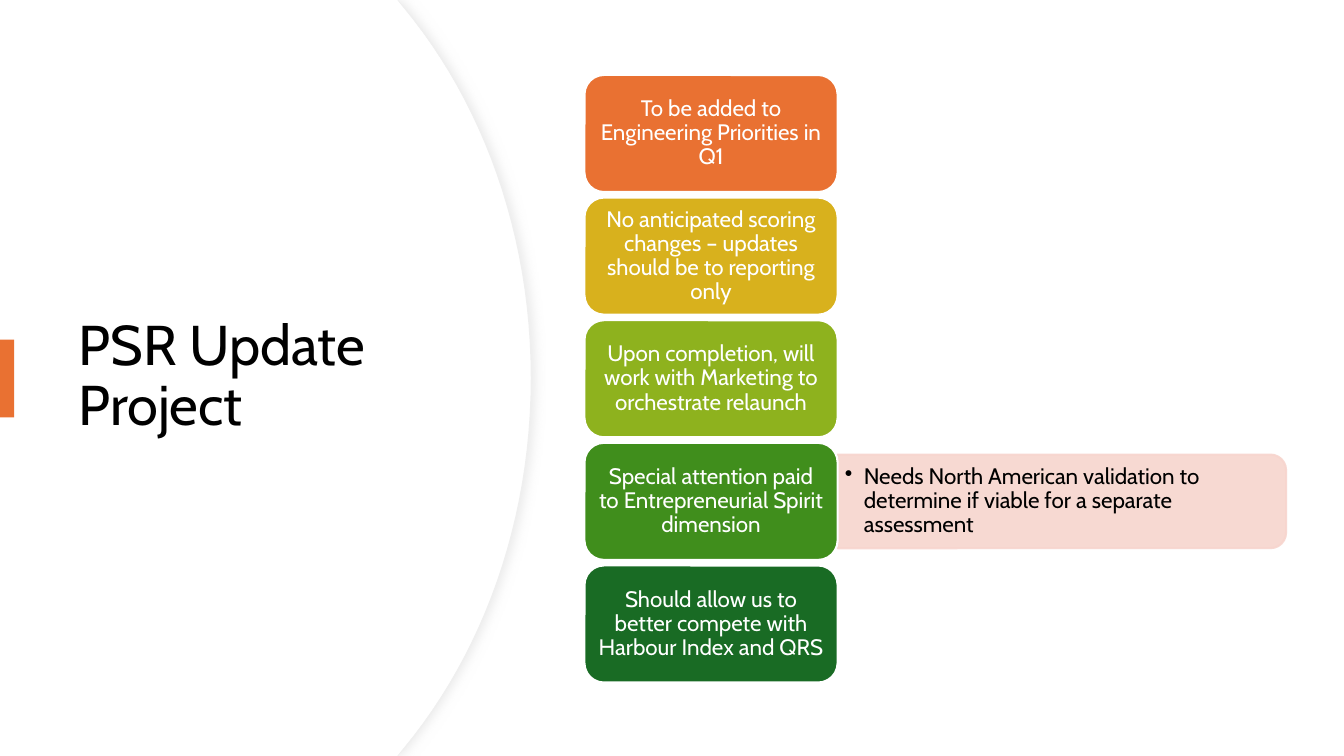
from lxml import etree
from pptx import Presentation
from pptx.dml.color import RGBColor
from pptx.enum import shapes, text
from pptx.oxml.ns import qn
from pptx.util import Cm, Pt

FONT = "Cabin"
TITLE = "PSR Update Project"
STEPS = [
    ("To be added to Engineering Priorities in Q1", "E97132"),
    ("No anticipated scoring changes – updates should be to reporting only", "D8B11D"),
    ("Upon completion, will work with Marketing to orchestrate relaunch", "8EB21E"),
    ("Special attention paid to Entrepreneurial Spirit dimension", "408E1C"),
    ("Should allow us to better compete with Harbour Index and QRS", "196B24"),
]
NOTE = "Needs North American validation to determine if viable for a separate assessment"
NOTE_STEP = 3

WIDE, HIGH = 33.87, 19.05
LEFT, TOP, BOX_W, BOX_H, PITCH = 14.73, 1.89, 6.38, 2.95, 3.09
NOTE_W, NOTE_H = 11.3, 2.36
ARC = [(10.19, 0.2), (12.17, 2.59), (13.39, 5.89), (13.39, HIGH / 2)]
PADS = (0.18, 0.09)

prs = Presentation()
prs.slide_width, prs.slide_height = Cm(WIDE), Cm(HIGH)
slide = prs.slides.add_slide(prs.slide_layouts[6])
KIND = shapes.MSO_SHAPE


def rgb(code):
    return RGBColor.from_string(code)


def paint(shape, fill, line=None, width=1.5):
    shape.shadow.inherit = False
    shape.fill.solid()
    shape.fill.fore_color.rgb = rgb(fill)
    if line:
        shape.line.color.rgb = rgb(line)
        shape.line.width = Pt(width)
    else:
        shape.line.fill.background()


def write(shape, words, size, color, align, pads):
    frame = shape.text_frame
    frame.word_wrap = True
    frame.vertical_anchor = text.MSO_ANCHOR.MIDDLE
    frame.margin_left = frame.margin_right = Cm(pads[0])
    frame.margin_top = frame.margin_bottom = Cm(pads[1])
    para = frame.paragraphs[0]
    para.alignment, para.line_spacing = align, 0.9
    run = para.add_run()
    run.text = words
    run.font.name, run.font.size = FONT, Pt(size)
    run.font.color.rgb = rgb(color)
    return para


def add_box(kind, x, y, w, h):
    return slide.shapes.add_shape(kind, Cm(x), Cm(y), Cm(w), Cm(h))


def add_label(x, y, w, h):
    return slide.shapes.add_textbox(Cm(x), Cm(y), Cm(w), Cm(h))


def add_panel(shift):
    """Draw the left panel whose right edge bulges out, moved left by shift."""
    ends = [(x - shift, y) for x, y in ARC]
    half = []
    for i in range(25):
        t = i / 24
        mix = ((1 - t) ** 3, 3 * t * (1 - t) ** 2, 3 * t * t * (1 - t), t ** 3)
        half.append(tuple(sum(m * p[k] for m, p in zip(mix, ends)) for k in (0, 1)))
    half.insert(0, (10.01, 0))
    edge = half + [(x, HIGH - y) for x, y in reversed(half[:-1])]
    pen = slide.shapes.build_freeform(0, 0)
    pen.add_line_segments([(Cm(x), Cm(y)) for x, y in edge + [(0, HIGH)]], close=True)
    return pen.convert_to_shape()


def add_alpha(shape, percent):
    for color in shape._element.spPr.iter(qn("a:srgbClr")):
        etree.SubElement(color, qn("a:alpha"), val=str(percent * 1000))


def add_shadow(shape, code, percent, blur, dist):
    effects = shape._element.spPr.find(qn("a:effectLst"))
    cast = etree.SubElement(effects, qn("a:outerShdw"), blurRad=str(Pt(blur)),
                            dist=str(Pt(dist)), dir="0", algn="l", rotWithShape="0")
    color = etree.SubElement(cast, qn("a:srgbClr"), val=code)
    etree.SubElement(color, qn("a:alpha"), val=str(percent * 1000))


def add_bullet(para, indent):
    props = para._p.get_or_add_pPr()
    props.set("marL", str(Cm(indent)))
    props.set("indent", str(-Cm(indent)))
    etree.SubElement(props, qn("a:buChar"), char="•")


# Left panel and title
panel = add_panel(0)
paint(panel, "FFFFFF", "EFEFEF", 0.75)
add_shadow(panel, "D9D9D9", 50, 7, 3)
paint(add_panel(0.03), "FFFFFF")
write(add_label(1.73, 3.23, 10.01, 12.57), TITLE, 40, "000000",
      text.PP_ALIGN.LEFT, (0.25, 0.13))
paint(add_box(KIND.RECTANGLE, 0, 8.56, 0.36, 1.96), "E97132")

# Note beside its step; the shape is turned so its round corners face right
right = LEFT + BOX_W
middle = TOP + NOTE_STEP * PITCH + BOX_H / 2
note = add_box(KIND.ROUND_2_SAME_RECTANGLE, right + (NOTE_W - NOTE_H) / 2,
               middle - NOTE_W / 2, NOTE_H, NOTE_W)
note.rotation = 90
paint(note, "F7D5CE", "F7D5CE")
add_alpha(note, 90)
label = add_label(right, middle - 1.07, 11.2, 2.14)
add_bullet(write(label, NOTE, 16, "000000", text.PP_ALIGN.LEFT, PADS), 0.48)

# Column of steps
for i, (words, fill) in enumerate(STEPS):
    step = add_box(KIND.ROUNDED_RECTANGLE, LEFT, TOP + i * PITCH, BOX_W, BOX_H)
    paint(step, fill, "FFFFFF")
    write(step, words, 16, "FFFFFF", text.PP_ALIGN.CENTER, PADS)

prs.save("out.pptx")
